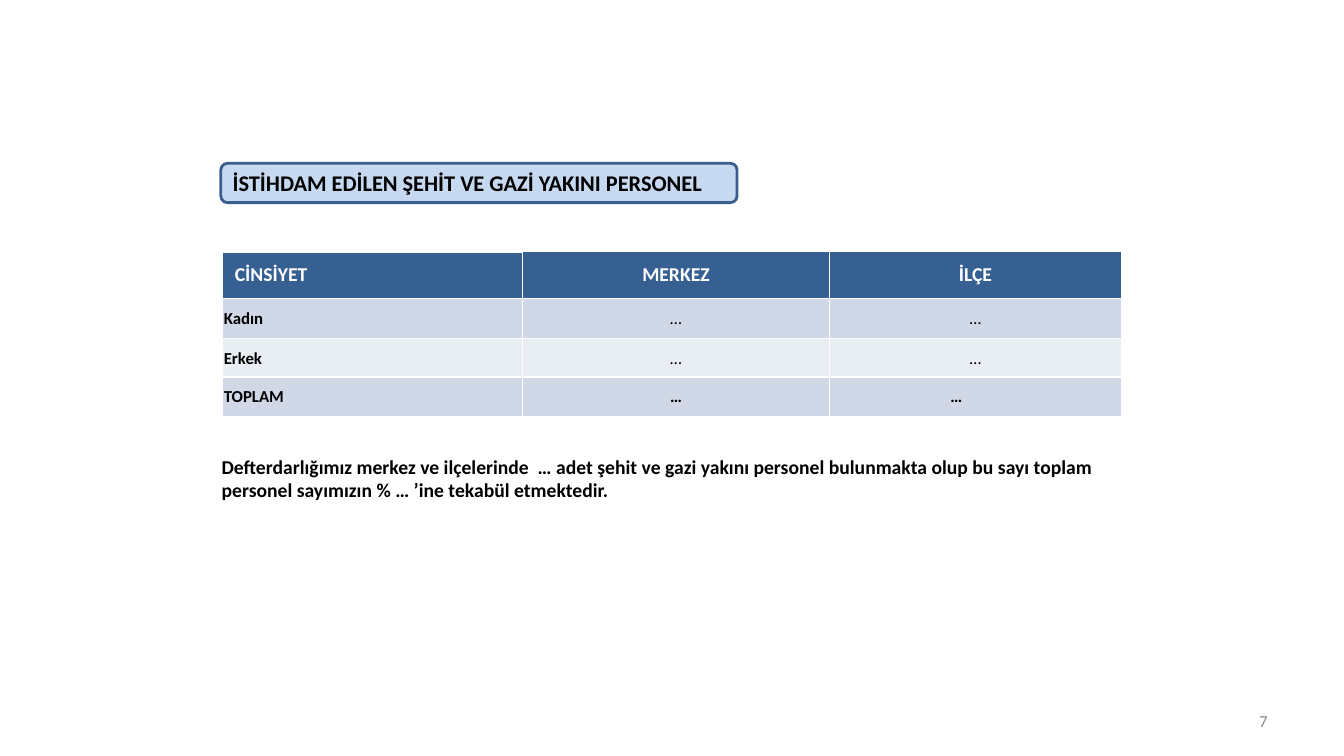
from lxml import etree
from pptx import Presentation
from pptx.dml.color import RGBColor
from pptx.enum import shapes, text
from pptx.oxml.ns import qn
from pptx.util import Inches, Pt

LEFT, CENTER, RIGHT = text.PP_ALIGN.LEFT, text.PP_ALIGN.CENTER, text.PP_ALIGN.RIGHT
MIDDLE = text.MSO_ANCHOR.MIDDLE


def rgb(color):
    return RGBColor.from_string(color)


def write(tf, words, size, color="000000", bold=True, align=LEFT):
    p = tf.paragraphs[0]
    p.alignment = align
    r = p.add_run()
    r.text = words
    r.font.name = "Calibri"
    r.font.size = Pt(size)
    r.font.bold = bold
    r.font.color.rgb = rgb(color)


prs = Presentation()
prs.slide_width, prs.slide_height = Inches(13.33), Inches(7.5)
s = prs.slides.add_slide(prs.slide_layouts[6])

# Heading
heading = s.shapes.add_shape(shapes.MSO_SHAPE.ROUNDED_RECTANGLE,
                             Inches(2.19), Inches(1.62), Inches(5.12), Inches(0.39))
heading.shadow.inherit = False
heading.fill.solid()
heading.fill.fore_color.rgb = rgb("C6D9F1")
heading.line.color.rgb = rgb("3A5F8C")
heading.line.width = Pt(2)
heading.text_frame.word_wrap = True
heading.text_frame.vertical_anchor = MIDDLE
write(heading.text_frame, "İSTİHDAM EDİLEN ŞEHİT VE GAZİ YAKINI PERSONEL", 16)

# Staff table
rows = [
    ("CİNSİYET", "MERKEZ", "İLÇE"),
    ("Kadın", "…", "…"),
    ("Erkek", "…", "…"),
    ("TOPLAM", "…", "…"),
]
row_fills = ["376092", "D0D8E8", "E9EDF4", "D0D8E8"]
col_widths = [2.97, 3.05, 2.89]
row_heights = [0.47, 0.4, 0.38, 0.39]
table = s.shapes.add_table(len(rows), len(col_widths), Inches(2.21), Inches(2.49),
                           Inches(sum(col_widths)), Inches(sum(row_heights))).table
for column, width in zip(table.columns, col_widths):
    column.width = Inches(width)
for row, height in zip(table.rows, row_heights):
    row.height = Inches(height)

for i, labels in enumerate(rows):
    for j, label in enumerate(labels):
        cell = table.cell(i, j)
        cell.vertical_anchor = MIDDLE
        cell.margin_left = cell.margin_right = cell.margin_top = Inches(0.01)
        cell.margin_bottom = 0
        header, first = i == 0, j == 0
        write(cell.text_frame, label, 14 if header else 12,
              "FFFFFF" if header else "000000",
              header or first or label != "…" or i == len(rows) - 1,
              LEFT if first else CENTER)
        tc_pr = cell._tc.get_or_add_tcPr()
        for side in ("lnL", "lnR", "lnT", "lnB"):
            thick = header and first and side == "lnT"
            ln = etree.SubElement(tc_pr, qn("a:" + side), w=str(Pt(3 if thick else 1)))
            fill = etree.SubElement(ln, qn("a:solidFill"))
            etree.SubElement(fill, qn("a:srgbClr"), val="FFFFFF")
        cell.fill.solid()
        cell.fill.fore_color.rgb = rgb(row_fills[i])
table.cell(0, 0).margin_left = Inches(0.12)
table.cell(3, 2).margin_right = Inches(0.39)

# Summary sentence
summary = s.shapes.add_textbox(Inches(2.1), Inches(4.46), Inches(8.94), Inches(0.57))
summary.text_frame.word_wrap = True
write(summary.text_frame,
      "Defterdarlığımız merkez ve ilçelerinde  … adet şehit ve gazi yakını personel "
      "bulunmakta olup bu sayı toplam personel sayımızın % … ’ine tekabül etmektedir.", 14)

# Page number
number = s.shapes.add_textbox(Inches(9.56), Inches(6.95), Inches(3.11), Inches(0.4))
number.text_frame.word_wrap = True
number.text_frame.vertical_anchor = MIDDLE
write(number.text_frame, "7", 12, "898989", False, RIGHT)

prs.save("out.pptx")
